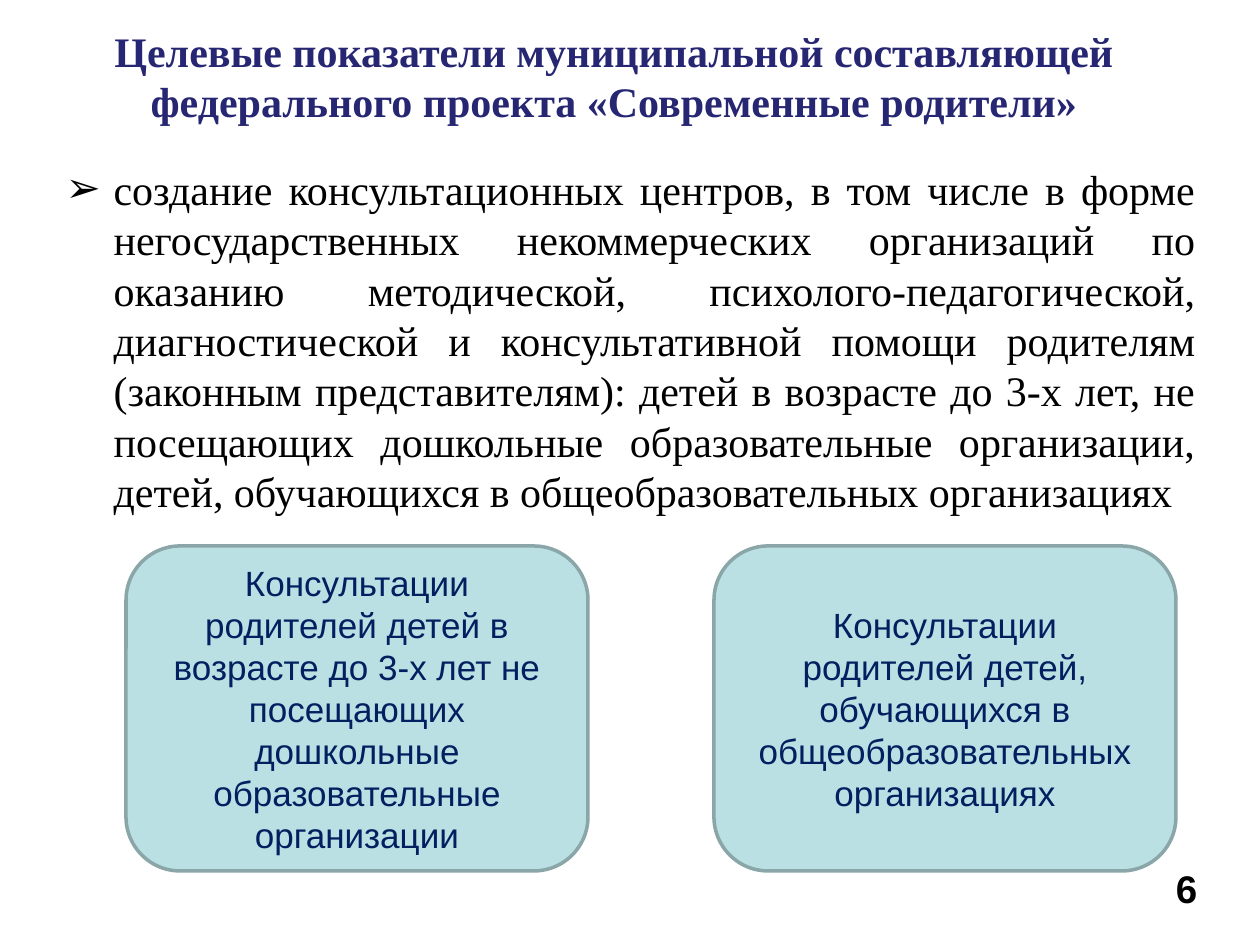
from lxml.etree import SubElement
from pptx import Presentation
from pptx.dml.color import RGBColor
from pptx.enum.shapes import MSO_SHAPE as Shape
from pptx.enum.text import MSO_ANCHOR as Anchor, MSO_AUTO_SIZE as AutoSize, PP_ALIGN as Align
from pptx.oxml.ns import qn
from pptx.util import Emu, Pt

TITLE = "Целевые показатели муниципальной составляющей федерального проекта «Современные родители»"
GOALS = [
    "создание консультационных центров, в том числе в форме негосударственных "
    "некоммерческих организаций по оказанию методической, психолого-педагогической, "
    "диагностической и консультативной помощи родителям (законным представителям): "
    "детей в возрасте до 3-х лет, не посещающих дошкольные образовательные организации, "
    "детей, обучающихся в общеобразовательных организациях",
]
CONSULTATIONS = [
    "Консультации родителей детей в возрасте до 3-х лет не посещающих "
    "дошкольные образовательные организации",
    "Консультации родителей детей, обучающихся в общеобразовательных организациях",
]
PAGE_NUMBER = "6"

THEME = {
    "title": {"font": "Times New Roman", "size": 24, "color": "262673", "bold": True},
    "body": {"font": "Times New Roman", "size": 24, "color": "000000", "bold": False},
    "card": {"font": "Arial", "size": 20, "color": "002060", "bold": False},
    "number": {"font": "Arial", "size": 22, "color": "000000", "bold": True},
    "card_fill": "BBE0E3",
    "card_line": "8AA6A8",
}

PX = 914400 // 126
SLIDE_SIZE = (1260, 945)
TITLE_BOX = (89, 19, 1050, 115)
BODY_BOX = (53, 157, 1155, 370)
NUMBER_BOX = (1134, 859, 105, 95)
CARD_LEFT, CARD_TOP, CARD_WIDTH, CARD_HEIGHT = 126, 546, 462, 325
CARD_GAP = 126
BULLET_INDENT = 48


def px(*lengths):
    return [Emu(length * PX) for length in lengths]


def place(shape, box):
    shape.left, shape.top, shape.width, shape.height = px(*box)


def write(shape, lines, style, align, anchor=Anchor.TOP):
    frame = shape.text_frame
    frame.text = "\n".join(lines)
    frame.word_wrap = True
    frame.auto_size = AutoSize.NONE
    frame.vertical_anchor = anchor
    for paragraph in frame.paragraphs:
        paragraph.alignment = align
        paragraph.space_before = Pt(0)
        for run in paragraph.runs:
            run.font.name = style["font"]
            run.font.size = Pt(style["size"])
            run.font.bold = style["bold"]
            run.font.color.rgb = RGBColor.from_string(style["color"])


def add_bullet(paragraph, symbol):
    properties = paragraph._p.get_or_add_pPr()
    indent = BULLET_INDENT * PX
    properties.set("marL", str(indent))
    properties.set("indent", str(-indent))
    SubElement(properties, qn("a:buFont")).set("typeface", "Arial")
    SubElement(properties, qn("a:buChar")).set("char", symbol)


def add_card(slide, text, left):
    card = slide.shapes.add_shape(
        Shape.ROUNDED_RECTANGLE, *px(left, CARD_TOP, CARD_WIDTH, CARD_HEIGHT)
    )
    card.shadow.inherit = False
    card.fill.solid()
    card.fill.fore_color.rgb = RGBColor.from_string(THEME["card_fill"])
    card.line.color.rgb = RGBColor.from_string(THEME["card_line"])
    card.line.width = Pt(2)
    write(card, [text], THEME["card"], Align.CENTER, Anchor.MIDDLE)


def main():
    presentation = Presentation()
    presentation.slide_width, presentation.slide_height = px(*SLIDE_SIZE)
    slide = presentation.slides.add_slide(presentation.slide_layouts[1])

    title, body = slide.placeholders
    place(title, TITLE_BOX)
    write(title, [TITLE], THEME["title"], Align.CENTER)
    place(body, BODY_BOX)
    write(body, GOALS, THEME["body"], Align.JUSTIFY)
    for paragraph in body.text_frame.paragraphs:
        add_bullet(paragraph, "➢")

    for index, text in enumerate(CONSULTATIONS):
        add_card(slide, text, CARD_LEFT + index * (CARD_WIDTH + CARD_GAP))

    number = slide.shapes.add_textbox(*px(*NUMBER_BOX))
    write(number, [PAGE_NUMBER], THEME["number"], Align.CENTER)

    presentation.save("out.pptx")


if __name__ == "__main__":
    main()
